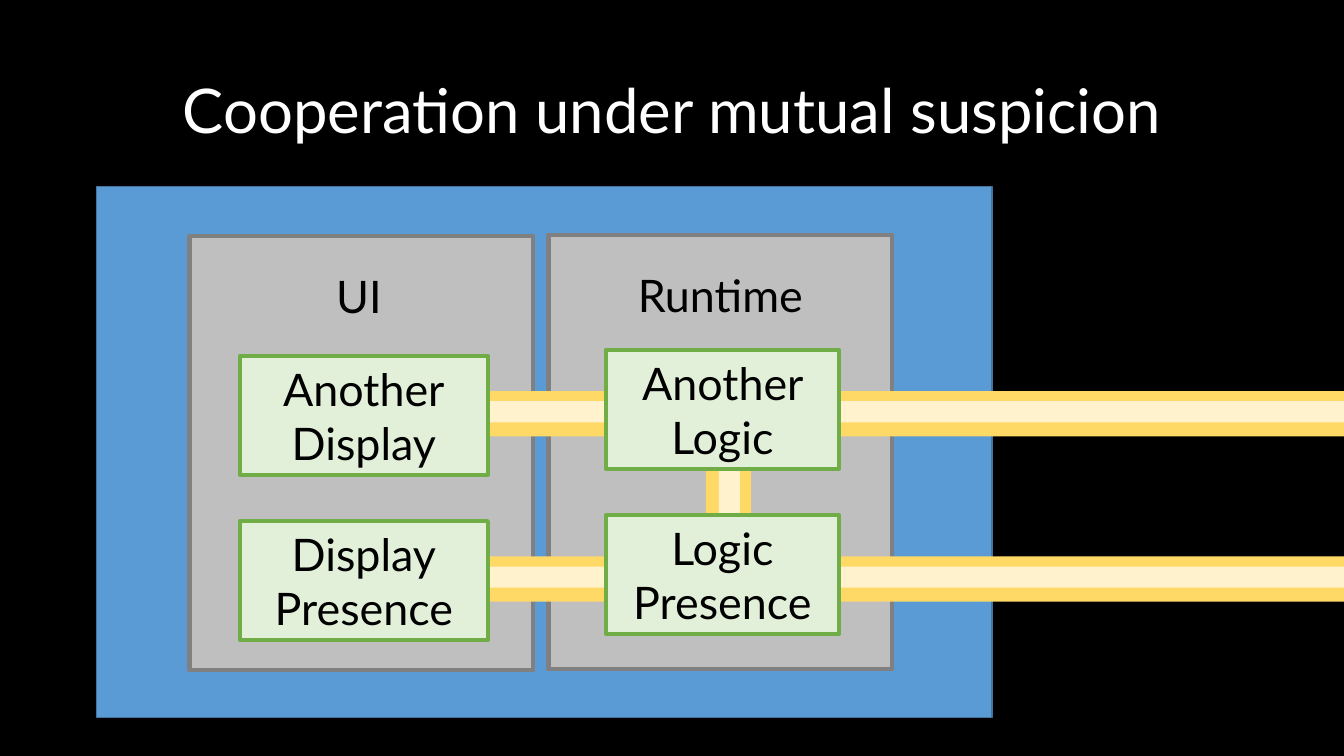
import pptx
import pptx.util
import pptx.dml.color
import pptx.enum.shapes
import pptx.enum.text

Inches, Pt = pptx.util.Inches, pptx.util.Pt
CENTER = pptx.enum.text.PP_ALIGN.CENTER
MIDDLE = pptx.enum.text.MSO_ANCHOR.MIDDLE

deck = pptx.Presentation()
deck.slide_width, deck.slide_height = Inches(13.33), Inches(7.5)
slide = deck.slides.add_slide(deck.slide_layouts[5])


def rgb(hex_string):
    return pptx.dml.color.RGBColor.from_string(hex_string)


def block(left, top, width, height, fill, line=None, line_width=3):
    """Add a flat rectangle, measured in inches, with an optional outline."""
    rect = slide.shapes.add_shape(
        pptx.enum.shapes.MSO_SHAPE.RECTANGLE,
        Inches(left), Inches(top), Inches(width), Inches(height))
    rect.shadow.inherit = False
    rect.fill.solid()
    rect.fill.fore_color.rgb = rgb(fill)
    if line:
        rect.line.color.rgb = rgb(line)
        rect.line.width = Pt(line_width)
    else:
        rect.line.fill.background()
    return rect


slide.background.fill.solid()
slide.background.fill.fore_color.rgb = rgb("000000")

title = slide.shapes.title
title.left, title.top = Inches(0.92), Inches(0.4)
title.width, title.height = Inches(11.5), Inches(1.45)
title.text_frame.text = "Cooperation under mutual suspicion"
title.text_frame.vertical_anchor = MIDDLE
title.text_frame.paragraphs[0].line_spacing = 0.9
texts = [(title.text_frame, 44, "FFFFFF")]

# Machine with its two processes
block(0.96, 1.85, 8.88, 5.27, "5B9BD5", "43739E", 1)
panel_width = 3.41
for process, left, top, label_width in (("UI", 1.88, 2.34, 3.36),
                                        ("Runtime", 5.44, 2.33, panel_width)):
    block(left, top, panel_width, 4.31, "BFBFBF", "808080")
    label = slide.shapes.add_textbox(
        Inches(left), Inches(top + 0.28), Inches(label_width), Inches(0.64))
    label.text_frame.word_wrap = True
    label.text_frame.text = process
    texts.append((label.text_frame, 32, "000000"))

# Pipes: a dark casing with a light core, one upright and one along each row
row_pitch = 1.64
block(7.0, 3.88, 0.45, 2.31, "FFD966")
block(7.13, 3.81, 0.21, 2.27, "FFF2CC")
for row in range(2):
    pipe_top = 3.88 + row * row_pitch
    block(3.41, pipe_top, 9.92, 0.45, "FFD966")
    block(3.59, pipe_top + 0.1, 9.74, 0.21, "FFF2CC")

# Components: display column, then logic column
columns = (
    (2.38, 3.53, 2.46, ("Another\nDisplay", "Display\nPresence")),
    (6.01, 3.47, 2.31, ("Another Logic", "Logic\nPresence")),
)
for left, top, width, components in columns:
    for row, component in enumerate(components):
        box = block(left, top + row * row_pitch, width, 1.18, "E2F0D9", "70AD47")
        box.text_frame.word_wrap = True
        box.text_frame.vertical_anchor = MIDDLE
        box.text_frame.text = component
        texts.append((box.text_frame, 32, "000000"))

for frame, size, color in texts:
    for paragraph in frame.paragraphs:
        paragraph.alignment = CENTER
        for run in paragraph.runs:
            run.font.name = "Lato"
            run.font.size = Pt(size)
            run.font.color.rgb = rgb(color)

deck.save("out.pptx")
